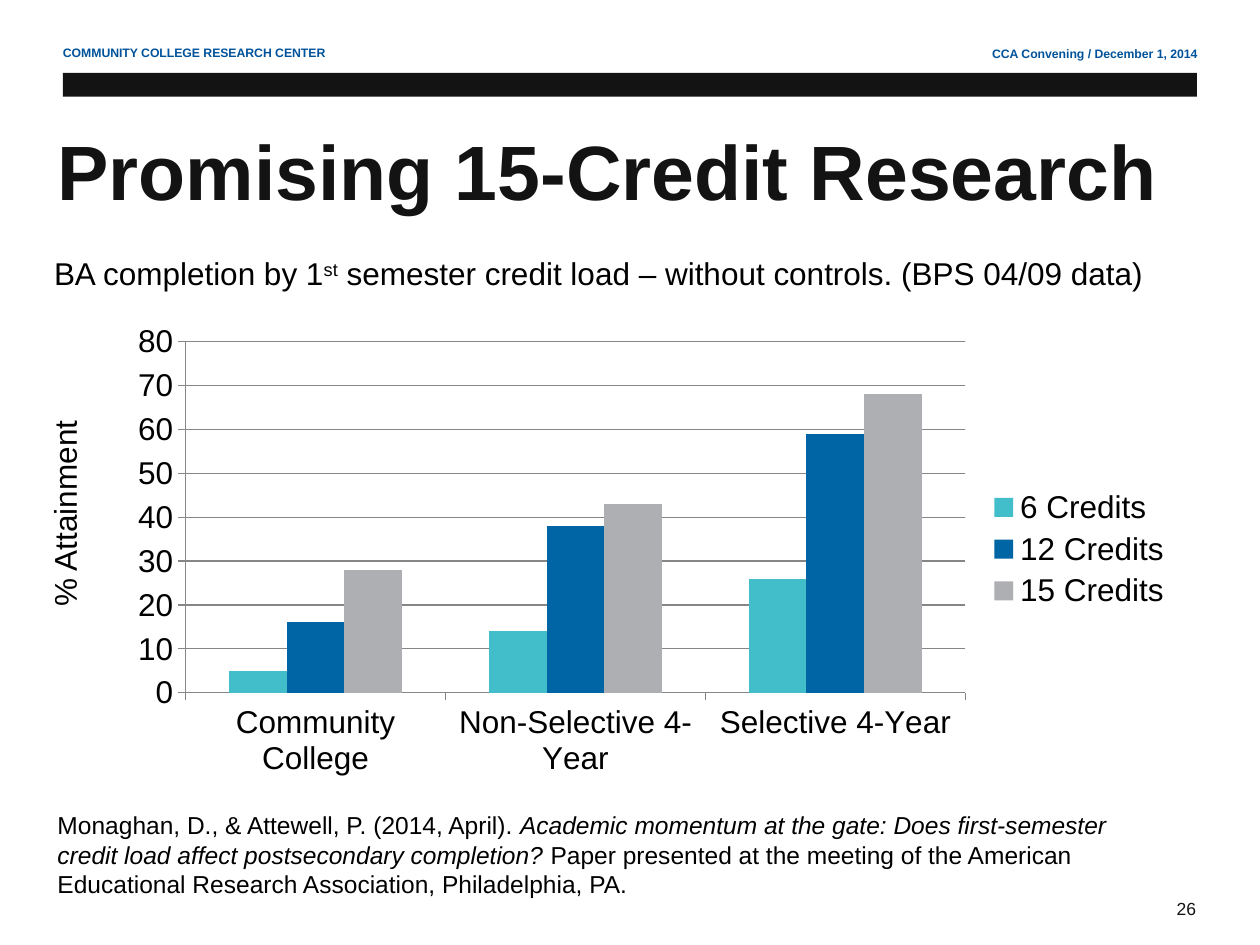
"""Build a slide on credit load and BA completion."""
from lxml.etree import SubElement
from pptx import Presentation
from pptx.chart.data import CategoryChartData
from pptx.dml.color import RGBColor
from pptx.enum.chart import XL_CHART_TYPE, XL_LEGEND_POSITION, XL_TICK_MARK
from pptx.enum.shapes import MSO_SHAPE
from pptx.enum.text import MSO_ANCHOR, PP_ALIGN
from pptx.oxml.ns import qn
from pptx.util import Cm, Pt

COLORS = {
    "ink": "141313", "header": "00539B", "text": "000000", "axis": "868686",
    "6 Credits": "42BECA", "12 Credits": "0065A4", "15 Credits": "ADAFB2",
}
COMPLETION = {
    "6 Credits": (5, 14, 26),
    "12 Credits": (16, 38, 59),
    "15 Credits": (28, 43, 68),
}
COLLEGES = ("Community College", "Non-Selective 4-Year", "Selective 4-Year")


class SlideBuilder:
    """Hold the style and the current slide."""

    font_name = "Arial"

    def __init__(self, slide):
        self.slide = slide

    def color(self, name):
        """Return a named colour."""
        return RGBColor.from_string(COLORS[name])

    def style(self, font, size, color="text", bold=False):
        """Apply the slide's typeface to a font."""
        font.name, font.size, font.bold = self.font_name, Pt(size), bold
        font.color.rgb = self.color(color)

    def text(self, box, pieces, size, color="text", bold=False, wrap=True,
             align=PP_ALIGN.LEFT, anchor=MSO_ANCHOR.TOP, upward=False):
        """Add one paragraph made of (text, look) pieces."""
        frame = self.slide.shapes.add_textbox(*map(Cm, box)).text_frame
        frame.word_wrap, frame.vertical_anchor = wrap, anchor
        if upward:
            frame._txBody.bodyPr.set("vert", "vert270")
        paragraph = frame.paragraphs[0]
        paragraph.alignment = align
        self.style(paragraph.font, size, color, bold)
        for words, look in pieces:
            run = paragraph.add_run()
            run.text = words
            if look == "italic":
                run.font.italic = True
            elif look == "superscript":
                run._r.get_or_add_rPr().set("baseline", "30000")

    def bar(self, box, color):
        """Add a plain filled band."""
        band = self.slide.shapes.add_shape(MSO_SHAPE.RECTANGLE, *map(Cm, box))
        band.shadow.inherit = False
        band.fill.solid()
        band.fill.fore_color.rgb = self.color(color)
        band.line.fill.background()

    def chart(self, box, categories, series, plot_box):
        """Add a clustered column chart with a fixed plot area."""
        data = CategoryChartData()
        data.categories = categories
        for name, values in series.items():
            data.add_series(name, values)
        chart = self.slide.shapes.add_chart(
            XL_CHART_TYPE.COLUMN_CLUSTERED, *map(Cm, box), data).chart
        self.style(chart.font, 18)
        chart.has_title = False
        chart.has_legend = True
        chart.legend.position = XL_LEGEND_POSITION.RIGHT
        chart.legend.include_in_layout = False

        plot = chart.plots[0]
        plot.gap_width, plot.overlap, plot.vary_by_categories = 150, 0, False
        for column in plot.series:
            column.format.fill.solid()
            column.format.fill.fore_color.rgb = self.color(column.name)

        scale = chart.value_axis
        scale.minimum_scale, scale.maximum_scale, scale.major_unit = 0, 80, 10
        scale.has_major_gridlines = True
        for axis in (chart.category_axis, scale):
            axis.major_tick_mark = XL_TICK_MARK.OUTSIDE
            axis.minor_tick_mark = XL_TICK_MARK.NONE
        for part in (chart.category_axis, scale, scale.major_gridlines):
            part.format.line.color.rgb = self.color("axis")
            part.format.line.width = Pt(0.75)
        self.place_plot(chart, plot_box)

    def place_plot(self, chart, plot_box):
        """Fix the inner plot area as fractions of the chart."""
        area = chart._chartSpace.chart.plotArea
        for old in area.findall(qn("c:layout")):
            area.remove(old)
        layout = SubElement(area, qn("c:layout"))
        area.insert(0, layout)
        manual = SubElement(layout, qn("c:manualLayout"))
        settings = {"layoutTarget": "inner", "xMode": "edge", "yMode": "edge",
                    **dict(zip("xywh", plot_box))}
        for tag, value in settings.items():
            SubElement(manual, qn(f"c:{tag}")).set("val", str(value))


def main():
    """Build and save the slide."""
    deck = Presentation()
    deck.slide_width, deck.slide_height = Cm(25.4), Cm(19.05)
    page = SlideBuilder(deck.slides.add_slide(deck.slide_layouts[6]))

    page.text((16.31, 0.81, 8.08, 0.56),
              [("CCA Convening / December 1, 2014", "plain")],
              7, "header", bold=True, align=PP_ALIGN.RIGHT)
    page.text((23.47, 17.98, 1.17, 0.69), [("26", "plain")], 10, "ink")
    page.bar((1.27, 1.47, 22.86, 0.48), "ink")
    page.text((1.02, 0.79, 9.04, 0.56),
              [("COMMUNITY COLLEGE RESEARCH CENTER", "plain")],
              7, "header", bold=True)
    page.text((0.91, 1.83, 22.86, 3.18),
              [("Promising 15-Credit Research", "plain")],
              44, "ink", bold=True, anchor=MSO_ANCHOR.MIDDLE)
    page.text((0.84, 5, 22.53, 1.02), [
        ("BA completion by 1", "plain"),
        ("st", "superscript"),
        (" semester credit load – without controls. (BPS 04/09 data)", "plain"),
    ], 18, wrap=False)
    page.text((0.91, 16.21, 22.76, 2.82), [
        ("Monaghan, D., & Attewell, P. (2014, April). ", "plain"),
        ("Academic momentum at the gate: Does first-semester credit load "
         "affect postsecondary completion?", "italic"),
        (" Paper presented at the meeting of the American Educational "
         "Research Association, Philadelphia, PA.", "plain"),
    ], 14)
    page.chart((2.34, 6.32, 21.54, 9.5), COLLEGES, COMPLETION,
               (0.065, 0.06, 0.73, 0.745))
    page.text((0.79, 8.43, 1.27, 4.04), [("% Attainment", "plain")],
              18, wrap=False, upward=True)

    deck.save("out.pptx")


if __name__ == "__main__":
    main()
